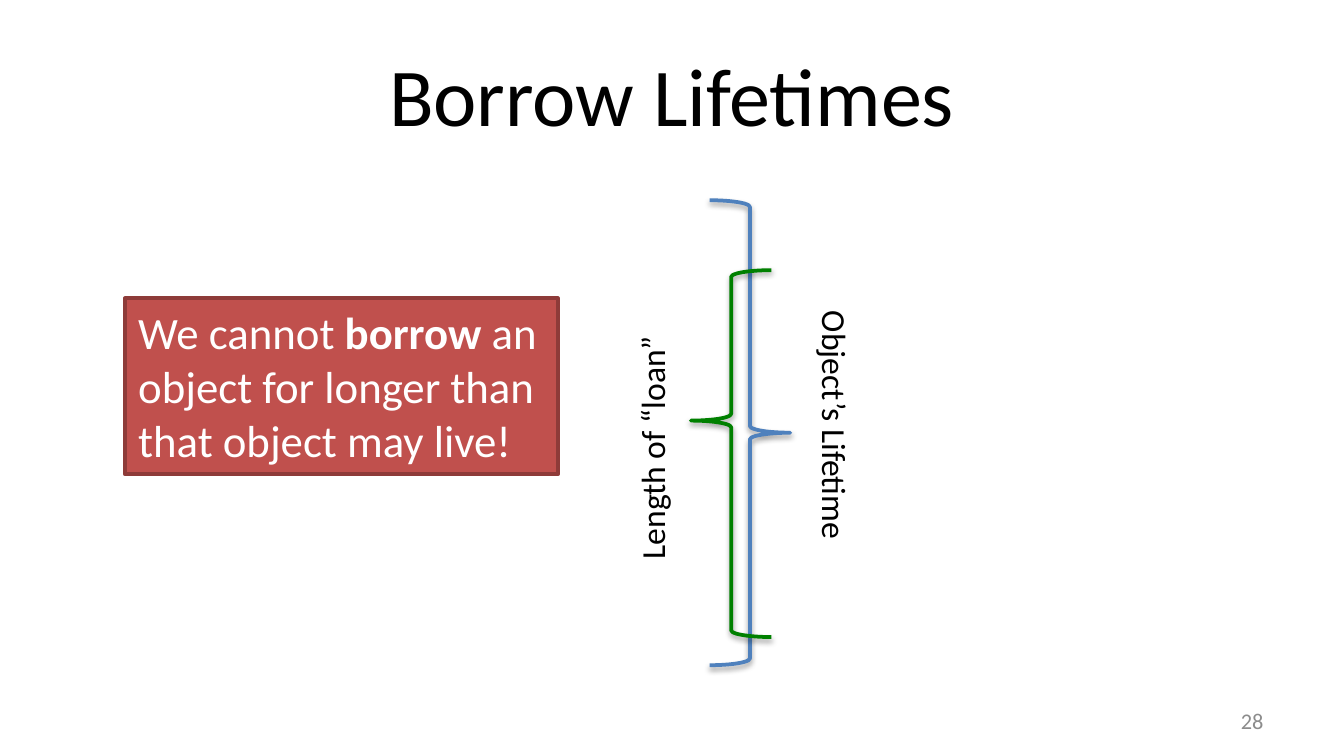
"""Build the Borrow Lifetimes slide."""
from dataclasses import dataclass

from lxml import etree
from pptx import Presentation
from pptx.dml.color import RGBColor
from pptx.enum.shapes import MSO_SHAPE
from pptx.enum.text import MSO_ANCHOR, MSO_AUTO_SIZE, PP_ALIGN
from pptx.oxml import parse_xml
from pptx.oxml.ns import nsdecls
from pptx.shapes.autoshape import Shape
from pptx.slide import Slide
from pptx.util import Inches, Pt

BLACK = RGBColor(0x00, 0x00, 0x00)
WHITE = RGBColor(0xFF, 0xFF, 0xFF)
GRAY = RGBColor(0x8C, 0x8C, 0x8C)
RED = RGBColor(0xC0, 0x50, 0x4D)
DARK_RED = RGBColor(0x8E, 0x3B, 0x39)
BLUE = RGBColor(0x4F, 0x81, 0xBD)
GREEN = RGBColor(0x00, 0x80, 0x00)
RECTANGLE, RIGHT_BRACE = MSO_SHAPE.RECTANGLE, MSO_SHAPE.RIGHT_BRACE
TOP, MIDDLE = MSO_ANCHOR.TOP, MSO_ANCHOR.MIDDLE
LEFT, CENTER, RIGHT = PP_ALIGN.LEFT, PP_ALIGN.CENTER, PP_ALIGN.RIGHT
GROW = MSO_AUTO_SIZE.SHAPE_TO_FIT_TEXT
FONT = "Calibri"
LINE_WIDTH = Pt(2)
SLIDE_WIDTH = Inches(10)
SLIDE_HEIGHT = SLIDE_WIDTH * 9 // 16

Box = tuple[float, float, float, float]


@dataclass(frozen=True)
class Brace:
    box: Box
    color: RGBColor
    rotation: float = 0
    tip: float = 0.5


@dataclass(frozen=True)
class Label:
    text: str
    box: Box
    rotation: float


BRACES = (
    Brace((5.28, 1.49, 0.6, 3.46), BLUE),
    Brace((5.14, 2.01, 0.6, 2.73), GREEN, 180, 0.59),
)
LABELS = (
    Label("Object’s Lifetime", (5.25, 2.98, 1.93, 0.4), 90),
    Label("Length of “loan”", (3.91, 3.12, 1.88, 0.4), 270),
)
RULE = (
    ("We cannot ", False),
    ("borrow", True),
    (" an object for longer than that object may live!", False),
)


def soft_shadow() -> etree.ElementBase:
    return parse_xml(
        f'<a:effectLst {nsdecls("a")}>'
        '<a:outerShdw blurRad="40000" dist="20000" dir="5400000" rotWithShape="0">'
        '<a:srgbClr val="000000"><a:alpha val="38000"/></a:srgbClr>'
        "</a:outerShdw></a:effectLst>"
    )


def write(shape: Shape, runs: tuple[tuple[str, bool], ...], size: float,
          color: RGBColor, align: PP_ALIGN = LEFT, **frame_format) -> None:
    frame = shape.text_frame
    for attribute, value in frame_format.items():
        setattr(frame, attribute, value)
    paragraph = frame.paragraphs[0]
    paragraph.alignment = align
    for text, bold in runs:
        run = paragraph.add_run()
        run.text = text
        run.font.color.rgb = color
        font_format = {"name": FONT, "size": Pt(size), "bold": bold}
        for attribute, value in font_format.items():
            setattr(run.font, attribute, value)


def add_title(slide: Slide, text: str, box: Box) -> None:
    title = slide.shapes.title
    for side, length in zip(("left", "top", "width", "height"), box):
        setattr(title, side, Inches(length))
    write(title, ((text, False),), 44, BLACK, CENTER, vertical_anchor=MIDDLE)


def add_rule(slide: Slide, box: Box) -> None:
    rule = slide.shapes.add_shape(RECTANGLE, *map(Inches, box))
    rule.shadow.inherit = False
    rule.fill.solid()
    rule.fill.fore_color.rgb = RED
    rule.line.color.rgb = DARK_RED
    rule.line.width = LINE_WIDTH
    write(rule, RULE, 24, WHITE, vertical_anchor=TOP, word_wrap=True, auto_size=GROW)


def add_brace(slide: Slide, brace: Brace) -> None:
    outline = slide.shapes.add_shape(RIGHT_BRACE, *map(Inches, brace.box))
    outline.rotation = brace.rotation
    outline.adjustments[1] = brace.tip
    outline.fill.background()
    outline.line.color.rgb = brace.color
    outline.line.width = LINE_WIDTH
    outline.element.spPr.append(soft_shadow())


def add_label(slide: Slide, label: Label) -> None:
    caption = slide.shapes.add_textbox(*map(Inches, label.box))
    caption.rotation = label.rotation
    write(caption, ((label.text, False),), 18, BLACK, word_wrap=False, auto_size=GROW)


def add_page_number(slide: Slide, number: str, box: Box) -> None:
    page = slide.shapes.add_textbox(*map(Inches, box))
    write(page, ((number, False),), 12, GRAY, RIGHT,
          vertical_anchor=MIDDLE, word_wrap=True)


def main() -> None:
    deck = Presentation()
    deck.slide_width, deck.slide_height = SLIDE_WIDTH, SLIDE_HEIGHT
    slide = deck.slides.add_slide(deck.slide_layouts.get_by_name("Title Only"))
    add_title(slide, "Borrow Lifetimes", (0.5, 0.23, 9, 0.94))
    add_page_number(slide, "28", (7.17, 5.21, 2.33, 0.3))
    add_rule(slide, (0.93, 2.22, 3.22, 1.31))
    for brace, label in zip(BRACES, LABELS):
        add_brace(slide, brace)
        add_label(slide, label)
    deck.save("out.pptx")


if __name__ == "__main__":
    main()
